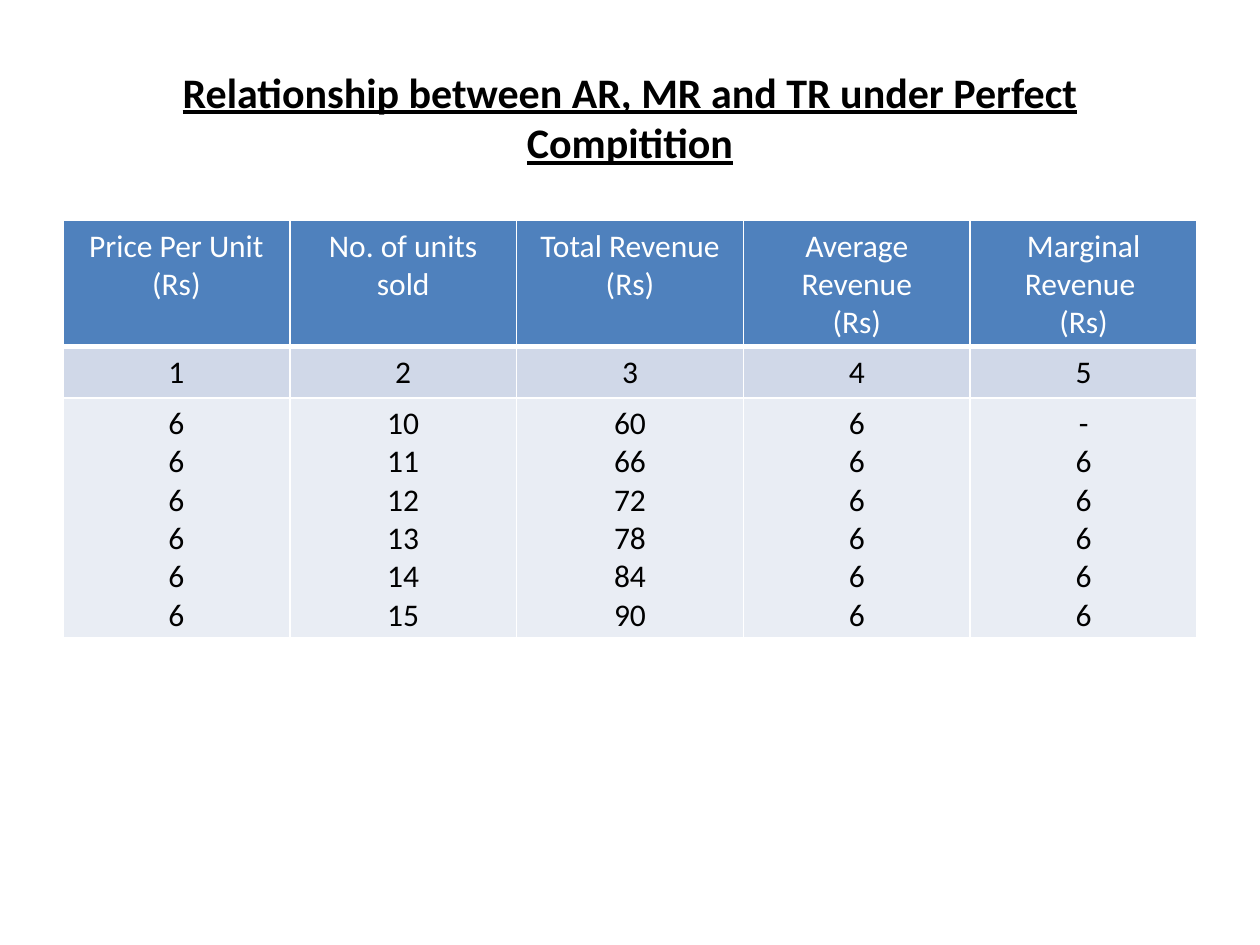
"""Build a slide relating average, marginal and total revenue."""
from dataclasses import dataclass

from lxml import etree
from pptx import Presentation
from pptx.dml.color import RGBColor
from pptx.enum.text import MSO_ANCHOR, PP_ALIGN
from pptx.oxml.ns import qn
from pptx.util import Cm, Pt

CENTER = PP_ALIGN.CENTER
MIDDLE = MSO_ANCHOR.MIDDLE


@dataclass(frozen=True)
class Theme:
    font: str = "Calibri"
    title_size: int = 24
    table_size: int = 18
    ink: str = "000000"
    header_ink: str = "FFFFFF"
    border: str = "FFFFFF"
    row_fills: tuple = ("4F81BD", "D0D8E8", "E9EDF4")
    border_width: float = 1
    header_rule: float = 3


class SlideBuilder:
    def __init__(self, slide, theme):
        self.slide = slide
        self.theme = theme

    def style_text(self, frame, size, color, emphasis=False):
        for paragraph in frame.paragraphs:
            paragraph.alignment = CENTER
            for run in paragraph.runs:
                font = run.font
                font.name, font.size = self.theme.font, Pt(size)
                font.bold = font.underline = emphasis
                font.color.rgb = RGBColor.from_string(color)

    def add_title(self, text, left, top, width, height):
        frame = self.slide.shapes.add_textbox(left, top, width, height).text_frame
        frame.word_wrap = True
        frame.vertical_anchor = MIDDLE
        frame.text = text
        self.style_text(frame, self.theme.title_size, self.theme.ink, emphasis=True)

    def add_borders(self, cell, bottom_width):
        properties = cell._tc.get_or_add_tcPr()
        for side in "LRTB":
            width = bottom_width if side == "B" else self.theme.border_width
            line = etree.SubElement(properties, qn(f"a:ln{side}"), w=str(Pt(width)))
            fill = etree.SubElement(line, qn("a:solidFill"))
            etree.SubElement(fill, qn("a:srgbClr"), val=self.theme.border)

    def add_table(self, rows, left, top, width, height, row_height):
        theme = self.theme
        table_frame = self.slide.shapes.add_table(
            len(rows), len(rows[0]), left, top, width, height)
        table = table_frame.table
        table.first_row = table.horz_banding = False
        for row_index, entries in enumerate(rows):
            table.rows[row_index].height = row_height
            is_header = row_index == 0
            ink = theme.header_ink if is_header else theme.ink
            rule = theme.header_rule if is_header else theme.border_width
            for column_index, entry in enumerate(entries):
                cell = table.cell(row_index, column_index)
                cell.text = entry
                self.style_text(cell.text_frame, theme.table_size, ink)
                self.add_borders(cell, rule)
                cell.fill.solid()
                cell.fill.fore_color.rgb = RGBColor.from_string(theme.row_fills[row_index])
        table_frame.height = height


def main():
    presentation = Presentation()
    presentation.slide_width, presentation.slide_height = Cm(25.4), Cm(19.05)
    slide = presentation.slides.add_slide(presentation.slide_layouts[6])
    builder = SlideBuilder(slide, Theme())

    price = 6
    units_sold = range(10, 16)
    prices = [price] * len(units_sold)
    total_revenue = [price * units for units in units_sold]
    marginal_revenue = ["-"] + prices[1:]
    headers = ["Price Per Unit\n(Rs)", "No. of units sold", "Total Revenue\n(Rs)",
               "Average Revenue\n(Rs)", "Marginal Revenue \n(Rs)"]
    column_numbers = [str(number) for number in range(1, len(headers) + 1)]
    schedule = ["\n".join(map(str, values)) for values in
                (prices, units_sold, total_revenue, prices, marginal_revenue)]

    margin, content_width = Cm(1.27), Cm(22.86)
    builder.add_title("Relationship between AR, MR and TR under Perfect Compitition",
                      margin, Cm(0.76), content_width, Cm(3.18))
    builder.add_table([headers, column_numbers, schedule],
                      margin, Cm(4.45), content_width, Cm(8.41), Cm(1.03))
    presentation.save("out.pptx")


if __name__ == "__main__":
    main()
